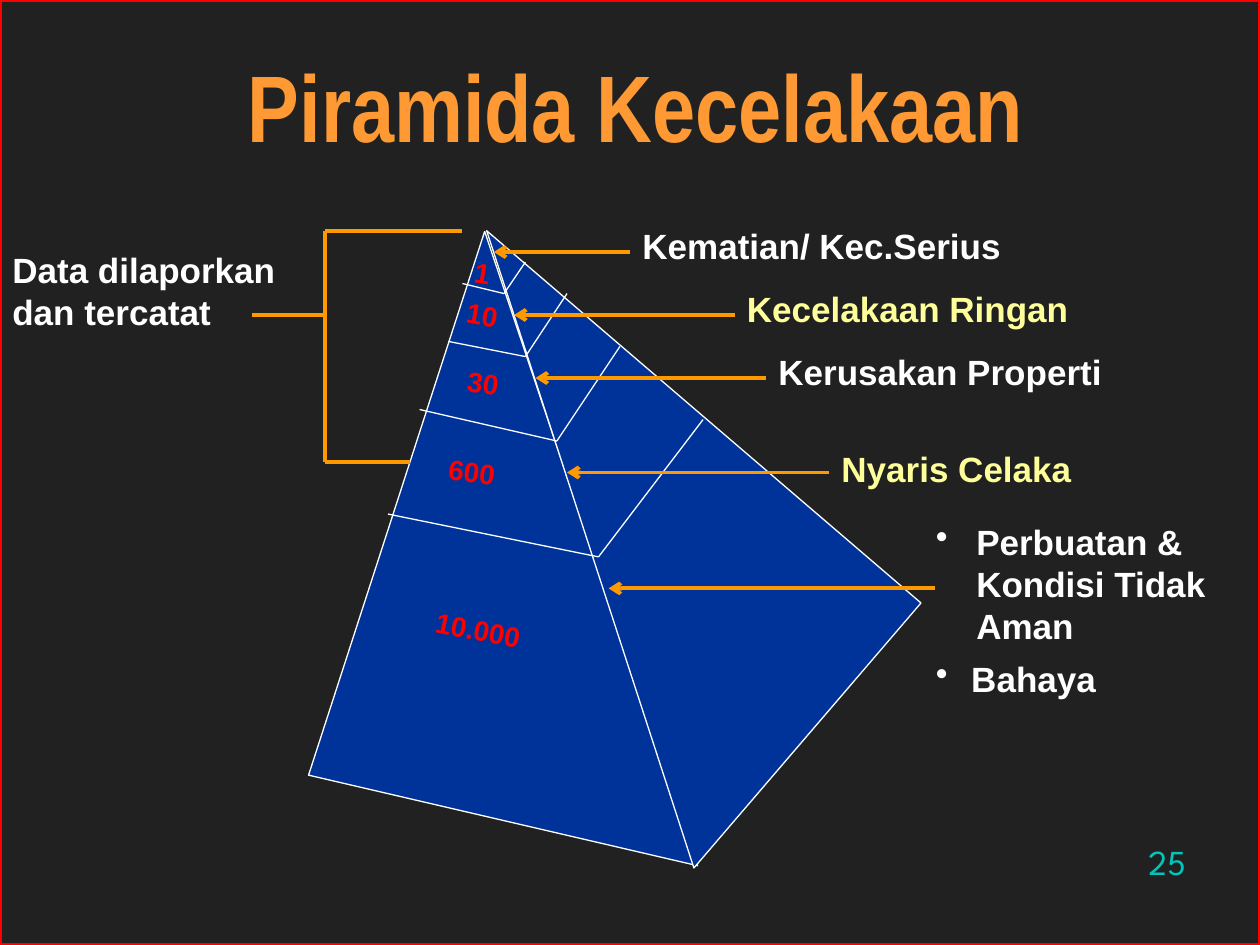
from dataclasses import dataclass

from lxml.etree import SubElement
from pptx import Presentation
from pptx.dml.color import RGBColor
from pptx.enum.shapes import MSO_CONNECTOR, MSO_SHAPE
from pptx.enum.text import MSO_ANCHOR, PP_ALIGN
from pptx.oxml.ns import qn
from pptx.util import Inches, Pt


@dataclass(frozen=True)
class Theme:
    back: str = "212121"
    face: str = "003399"
    white: str = "FFFFFF"
    yellow: str = "FFFF99"
    red: str = "FF0000"
    orange: str = "FF9900"
    title: str = "FF9933"
    teal: str = "00C6BB"
    font: str = "Arial"
    head_font: str = "Arial Narrow"
    page_font: str = "League Spartan"
    head_size: float = 54
    body_size: float = 20
    count_size: float = 16
    thin: float = 0.75
    thick: float = 2.25


class Canvas:
    def __init__(self, slide, theme):
        self.slide = slide
        self.theme = theme
        fill = slide.background.fill
        fill.solid()
        fill.fore_color.rgb = RGBColor.from_string(theme.back)

    def style(self, shape, text, size, color, font=None, bold=True,
              align=PP_ALIGN.LEFT, anchor=MSO_ANCHOR.TOP):
        frame = shape.text_frame
        frame.word_wrap = True
        frame.vertical_anchor = anchor
        frame.text = text
        para = frame.paragraphs[0]
        para.alignment = align
        para.font.name = font or self.theme.font
        para.font.size = Pt(size)
        para.font.bold = bold
        para.font.color.rgb = RGBColor.from_string(color)
        return para

    def title(self, text, box):
        shape = self.slide.shapes.title
        shape.left, shape.top, shape.width, shape.height = map(Inches, box)
        self.style(shape, text, self.theme.head_size, self.theme.title,
                   self.theme.head_font, align=PP_ALIGN.CENTER,
                   anchor=MSO_ANCHOR.MIDDLE)

    def label(self, text, box, color=None, indent=0):
        shape = self.slide.shapes.add_textbox(*map(Inches, box))
        para = self.style(shape, text, self.theme.body_size,
                          color or self.theme.white)
        if indent:
            props = para._p.get_or_add_pPr()
            props.set("marL", str(Inches(indent)))
            props.set("indent", str(-Inches(indent)))
            SubElement(props, qn("a:buChar")).set("char", "•")

    def count(self, text, box, angle):
        shape = self.slide.shapes.add_textbox(*map(Inches, box))
        shape.rotation = angle
        self.style(shape, text, self.theme.count_size, self.theme.red,
                   align=PP_ALIGN.CENTER, anchor=MSO_ANCHOR.MIDDLE)

    def page(self, text, box):
        shape = self.slide.shapes.add_textbox(*map(Inches, box))
        shape.text_frame.margin_bottom = Inches(0.01)
        self.style(shape, text, self.theme.body_size, self.theme.teal,
                   self.theme.page_font, bold=False,
                   align=PP_ALIGN.RIGHT, anchor=MSO_ANCHOR.BOTTOM)

    def shape(self, kind, box, color, width, fill=None):
        shape = self.slide.shapes.add_shape(kind, *map(Inches, box))
        shape.shadow.inherit = False
        shape.line.color.rgb = RGBColor.from_string(color)
        shape.line.width = Pt(width)
        if fill:
            shape.fill.solid()
            shape.fill.fore_color.rgb = RGBColor.from_string(fill)
        else:
            shape.fill.background()
        return shape

    def side(self, box, angle, apex):
        shape = self.shape(MSO_SHAPE.ISOSCELES_TRIANGLE, box,
                           self.theme.white, self.theme.thin, self.theme.face)
        shape.adjustments[0] = apex
        shape.rotation = angle

    def line(self, start, end, color, width, arrow=False):
        line = self.slide.shapes.add_connector(
            MSO_CONNECTOR.STRAIGHT, *map(Inches, start + end))
        line.line.color.rgb = RGBColor.from_string(color)
        line.line.width = Pt(width)
        props = line._element.spPr
        if arrow:
            SubElement(props.find(qn("a:ln")),
                       qn("a:headEnd")).set("type", "arrow")
        SubElement(props, qn("a:effectLst"))

    def chain(self, points, color, width):
        for start, end in zip(points, points[1:]):
            self.line(start, end, color, width)


def main():
    deck = Presentation()
    deck.slide_width, deck.slide_height = Inches(10), Inches(7.5)
    theme = Theme()
    art = Canvas(deck.slides.add_slide(deck.slide_layouts[5]), theme)

    art.title("Piramida Kecelakaan", (1.21, 0.33, 7.67, 1))
    art.label("Data dilaporkan dan tercatat", (0, 1.92, 2.83, 0.77))

    # Two faces of the pyramid
    art.side((2.92, 2.05, 3.17, 4.52), 13.1, 0.121)
    art.side((3.3, 2.09, 2.77, 4.54), 310.6, 1)

    # Level edges: left end, front corner, right end
    edges = [
        [(3.67, 2.25), (4, 2.33), (4.17, 2.08)],
        [(3.56, 2.71), (4.17, 2.83), (4.5, 2.33)],
        [(3.33, 3.25), (4.42, 3.5), (4.92, 2.75)],
        [(3.08, 4.08), (4.75, 4.42), (5.58, 3.33)],
    ]
    for edge in edges:
        art.chain(edge, theme.white, theme.thin)

    # Number of cases on each level: left, top, width, angle
    counts = [
        ("1", 3.58, 2, 0.5, 9.3),
        ("10", 3.58, 2.33, 0.5, 10.4),
        ("30", 3.42, 2.87, 0.83, 8.4),
        ("600", 3.33, 3.58, 0.83, 7.9),
        ("10.000", 3.17, 4.83, 1.25, 11.2),
    ]
    for text, left, top, width, angle in counts:
        art.count(text, (left, top, width, 0.33), angle)

    # Bracket round the reported levels
    art.chain([(3.67, 1.83), (2.58, 1.83), (2.58, 3.67), (3.25, 3.67)],
              theme.orange, theme.thick)
    art.line((2, 2.5), (2.58, 2.5), theme.orange, theme.thick)

    # Arrows from the labels to the levels: tip, tail, height
    arrows = [(3.92, 5, 2), (4.08, 5.83, 2.5), (4.25, 6.08, 3),
              (4.5, 6.58, 3.75), (4.83, 7.42, 4.67)]
    for tip, tail, top in arrows:
        art.line((tip, top), (tail, top), theme.orange, theme.thick, True)

    # Level labels
    labels = [
        ("Kematian/ Kec.Serius", (5, 1.73, 3.5, 0.43), theme.white, 0),
        ("Kecelakaan Ringan", (5.83, 2.23, 3.5, 0.43), theme.yellow, 0),
        ("Kerusakan Properti", (6.08, 2.73, 3, 0.43), theme.white, 0),
        ("Nyaris Celaka", (6.58, 3.5, 2.17, 0.43), theme.yellow, 0),
        ("Perbuatan & Kondisi Tidak Aman", (7.33, 4.08, 2.67, 1.1),
         theme.white, 0.32),
        ("Bahaya", (7.33, 5.17, 2.42, 0.43), theme.white, 0.28),
    ]
    for label in labels:
        art.label(*label)

    # Slide frame and page number
    art.shape(MSO_SHAPE.RECTANGLE, (0, 0, 10, 7.5), theme.red, theme.thick)
    art.page("25", (8.64, 6.47, 0.87, 0.54))

    deck.save("out.pptx")


if __name__ == "__main__":
    main()
